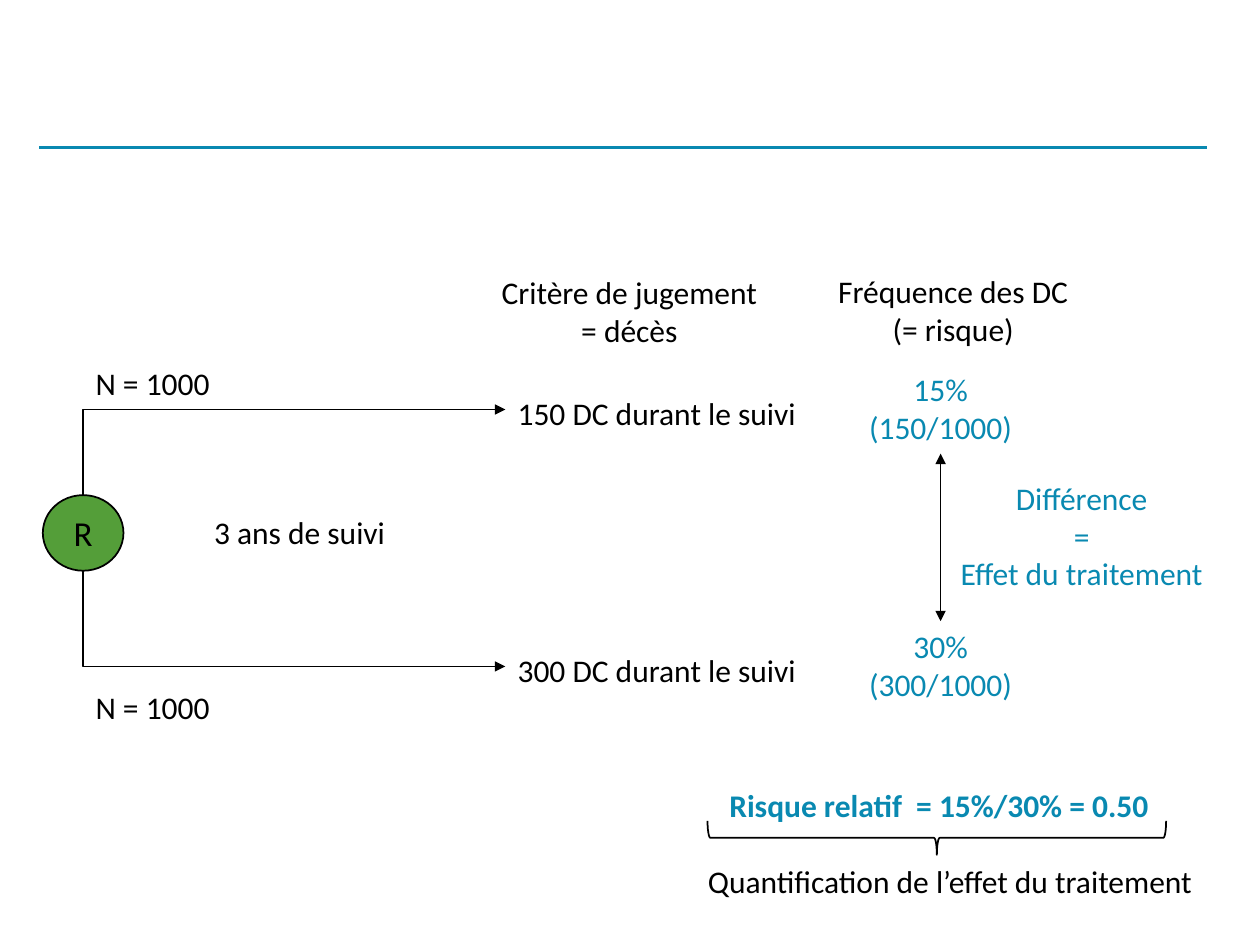
from lxml import etree
from pptx import Presentation
from pptx.dml.color import RGBColor
from pptx.enum.shapes import MSO_CONNECTOR, MSO_SHAPE
from pptx.enum.text import MSO_ANCHOR, MSO_AUTO_SIZE, PP_ALIGN
from pptx.oxml.ns import qn
from pptx.util import Inches, Pt

STRAIGHT, ELBOW = MSO_CONNECTOR.STRAIGHT, MSO_CONNECTOR.ELBOW
OVAL, BRACE = MSO_SHAPE.OVAL, MSO_SHAPE.RIGHT_BRACE
LEFT, CENTER = PP_ALIGN.LEFT, PP_ALIGN.CENTER
MIDDLE = MSO_ANCHOR.MIDDLE
GROW = MSO_AUTO_SIZE.SHAPE_TO_FIT_TEXT
TOP_SITE, BOTTOM_SITE = 0, 2
FONT = "Calibri"
COLORS = {"black": "000000", "blue": "0989B1", "green": "549E39"}


def color(name):
    return RGBColor.from_string(COLORS[name])


def write(text_frame, text, name="black", align=LEFT, size=18, bold=False):
    text_frame.text = text
    for paragraph in text_frame.paragraphs:
        paragraph.alignment = align
        for run in paragraph.runs:
            run.font.name = FONT
            run.font.size = Pt(size)
            run.font.bold = bold
            run.font.color.rgb = color(name)


def add_label(slide, box, text, **style):
    shape = slide.shapes.add_textbox(*[Inches(value) for value in box])
    shape.text_frame.word_wrap = False
    shape.text_frame.auto_size = GROW
    write(shape.text_frame, text, **style)
    return shape


def add_line(slide, kind, ends, name="black", width=1, arrows=()):
    connector = slide.shapes.add_connector(kind, *[Inches(value) for value in ends])
    connector.line.color.rgb = color(name)
    connector.line.width = Pt(width)
    line = connector.line._get_or_add_ln()
    for arrow in arrows:
        etree.SubElement(line, qn(f"a:{arrow}"), type="triangle")
    etree.SubElement(connector._element.spPr, qn("a:effectLst"))
    return connector


def add_bent_arrow(slide, ends, degrees):
    connector = add_line(slide, ELBOW, ends, arrows=["tailEnd"])
    properties = connector._element.spPr
    properties.find(qn("a:xfrm")).set("rot", str(degrees * 60000))
    properties.find(qn("a:prstGeom")).set("prst", "bentConnector2")


def add_randomisation(slide, left, top, width, height):
    node = slide.shapes.add_shape(
        OVAL, Inches(left), Inches(top), Inches(width), Inches(height))
    node.shadow.inherit = False
    node.fill.solid()
    node.fill.fore_color.rgb = color("green")
    node.line.color.rgb = color("black")
    node.line.width = Pt(1)
    node.text_frame.vertical_anchor = MIDDLE
    write(node.text_frame, "R", align=CENTER, size=20)

    center, reach = left + width / 2, 3.35
    middle = center + reach / 2
    for start, rise, degrees in ((top, -0.68, 90), (top + height, 0.76, 270)):
        half = abs(rise) / 2
        level = start + rise / 2
        side = reach / 2 if rise < 0 else -reach / 2
        add_bent_arrow(
            slide, (middle + half, level + side, middle - half, level - side), degrees)
    add_label(slide, (left + 1.26, top + 0.09, 1.58, 0.4), "3 ans de suivi")


def add_arm(slide, left, top, size_top, events, risk):
    add_label(slide, (left, size_top, 1.12, 0.4), "N = 1000")
    add_label(slide, (left + 3.35, top + 0.15, 2.5, 0.4), f"{events} DC durant le suivi")
    return add_label(slide, (left + 6.13, top - 0.04, 1.35, 0.71),
                     f"{risk}\n({events}/1000)", name="blue", align=CENTER)


def add_comparison(slide, treated, control):
    arrow = add_line(slide, STRAIGHT, (7.47, 3.6, 7.47, 4.93),
                     arrows=["headEnd", "tailEnd"])
    arrow.begin_connect(treated, BOTTOM_SITE)
    arrow.end_connect(control, TOP_SITE)
    add_label(slide, (7.51, 3.75, 2.15, 1.01),
              "Différence\n=\nEffet du traitement", name="blue", align=CENTER)


def add_conclusion(slide, left, top):
    add_label(slide, (left + 0.17, top, 3.57, 0.4),
              "Risque relatif  = 15%/30% = 0.50", name="blue", bold=True)
    add_label(slide, (left, top + 0.6, 4.1, 0.4),
              "Quantification de l’effet du traitement")
    brace = slide.shapes.add_shape(
        BRACE, Inches(left + 1.78), Inches(top - 1.36), Inches(0.27), Inches(3.64))
    brace.rotation = 90
    brace.shadow.inherit = False
    brace.fill.background()
    brace.line.color.rgb = color("black")
    brace.line.width = Pt(1)


def main():
    presentation = Presentation()
    presentation.slide_width, presentation.slide_height = Inches(10), Inches(7.5)
    slide = presentation.slides.add_slide(presentation.slide_layouts[6])
    add_line(slide, STRAIGHT, (0.31, 1.17, 9.58, 1.17), name="blue", width=2)
    add_randomisation(slide, 0.34, 3.93, 0.64, 0.6)
    add_label(slide, (3.87, 2.12, 2.25, 0.71),
              "Critère de jugement\n= décès", align=CENTER)
    add_label(slide, (6.54, 2.11, 2.05, 0.71),
              "Fréquence des DC\n(= risque)", align=CENTER)
    treated = add_arm(slide, 0.66, 2.93, 2.84, 150, "15%")
    control = add_arm(slide, 0.66, 4.97, 5.41, 300, "30%")
    add_comparison(slide, treated, control)
    add_conclusion(slide, 5.52, 6.19)
    presentation.save("out.pptx")


if __name__ == "__main__":
    main()
